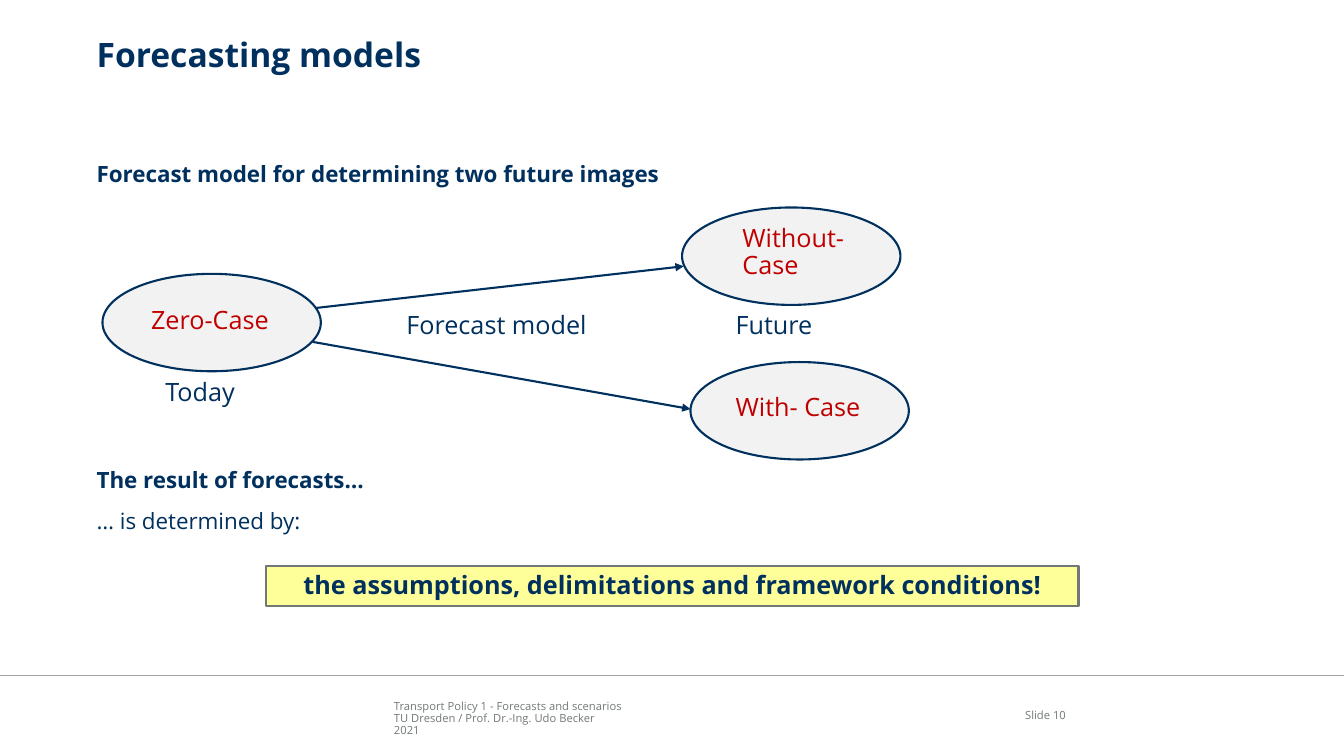
from pptx import Presentation
from pptx.dml.color import RGBColor
from pptx.enum.shapes import MSO_CONNECTOR, MSO_SHAPE
from pptx.enum.text import MSO_ANCHOR, PP_ALIGN
from pptx.oxml.ns import qn
from pptx.util import Inches, Pt
from lxml.etree import SubElement

COLORS = {"navy": "00305E", "red": "C00000", "gray": "727879",
          "rule": "A6A6A6", "pale": "F2F2F2", "gold": "FFFF99"}
COLS, ROWS = 160, 90
FLUSH = {"margin_left": 0, "margin_right": 0, "margin_top": 0, "margin_bottom": 0}


def color(name):
    return RGBColor.from_string(COLORS[name])


def apply(target, values):
    for key, value in values.items():
        setattr(target, key, value)


class Deck:
    def __init__(self):
        self.show = Presentation()
        apply(self.show, {"slide_width": Inches(13.33), "slide_height": Inches(7.5)})
        self.slide = self.show.slides.add_slide(self.show.slide_layouts[6])
        self.shapes = self.slide.shapes
        self.font = {"name": "Open Sans", "size": Pt(18), "bold": False}

    def place(self, x, y):
        return (round(self.show.slide_width * x / COLS),
                round(self.show.slide_height * y / ROWS))

    def label(self, shape, lines, tint="navy", frame=None, para=None, **font):
        box = shape.text_frame
        apply(box, {"word_wrap": True, **(frame or {})})
        for index, line in enumerate(lines):
            item = box.add_paragraph() if index else box.paragraphs[0]
            item.text = line
            apply(item, {"line_spacing": 0.9, **(para or {})})
            apply(item.font, {**self.font, **font})
            item.font.color.rgb = color(tint)
        return box

    def text(self, x, y, wide, high, *lines, **style):
        shape = self.shapes.add_textbox(*self.place(x, y), *self.place(wide, high))
        return self.label(shape, lines, **style)

    def shape(self, kind, x, y, wide, high, fill, edge):
        shape = self.shapes.add_shape(kind, *self.place(x, y), *self.place(wide, high))
        shape.shadow.inherit = False
        shape.fill.solid()
        shape.fill.fore_color.rgb = color(fill)
        shape.line.color.rgb = color(edge)
        shape.line.width = Pt(1.5)
        return shape

    def line(self, start, end, tint, width, arrow=False):
        line = self.shapes.add_connector(
            MSO_CONNECTOR.STRAIGHT, *self.place(*start), *self.place(*end))
        line.line.color.rgb = color(tint)
        line.line.width = Pt(width)
        props = line._element.spPr
        if arrow:
            SubElement(props.find(qn("a:ln")), qn("a:tailEnd"), type="triangle")
        SubElement(props, qn("a:effectLst"))


def main():
    deck = Deck()
    small = {"tint": "gray", "size": Pt(8)}
    deck.text(46.9, 82.9, 68, 4.8, "Transport Policy 1 - Forecasts and scenarios",
              "TU Dresden / Prof. Dr.-Ing. Udo Becker", "2021",
              frame={**FLUSH, "vertical_anchor": MSO_ANCHOR.BOTTOM}, **small)
    deck.line((0, 80.4), (COLS, 80.4), "rule", 1)
    deck.text(117.7, 82.8, 9.2, 4.8, "Slide 10",
              frame={**FLUSH, "vertical_anchor": MSO_ANCHOR.MIDDLE},
              para={"alignment": PP_ALIGN.RIGHT}, **small)

    deck.text(11.5, 4.6, 138.8, 9, "Forecasting models",
              frame=FLUSH, size=Pt(24), bold=True)
    deck.text(11.5, 19.4, 138.8, 4, "Forecast model for determining two future images",
              frame=FLUSH, size=Pt(16), bold=True)
    result = deck.text(11.5, 55.8, 138.8, 9, "The result of forecasts…",
                       "… is determined by:", frame=FLUSH, size=Pt(16))
    result.paragraphs[0].font.bold = True
    result.paragraphs[1].space_before = Pt(12)

    for start, end in (((37.3, 36.7), (81.4, 31.7)), ((37.2, 40.7), (82.2, 48.7))):
        deck.line(start, end, "navy", 1.5, arrow=True)
    for x, y in ((81.2, 24.7), (82.2, 43.1), (12.2, 32.6)):
        deck.shape(MSO_SHAPE.OVAL, x, y, 26, 11.6, "pale", "navy")

    labels = (("Without- Case", 87.2, 26.3, 19.2, 8.5, "red"),
              ("Zero-Case", 16.8, 36.1, 18, 4.8, "red"),
              ("With- Case", 86.4, 46.4, 19.2, 4.8, "red"),
              ("Future", 86.4, 36.7, 14.8, 4.8, "navy"),
              ("Today", 18.5, 44.6, 12, 4.8, "navy"),
              ("Forecast model", 47.2, 36.7, 30, 4.8, "navy"))
    for words, x, y, wide, high, tint in labels:
        deck.text(x, y, wide, high, words, tint=tint)

    banner = deck.shape(MSO_SHAPE.RECTANGLE, 31.7, 67.4, 96.7, 4.8, "gold", "gray")
    deck.label(banner, ["the assumptions, delimitations and framework conditions!"],
               para={"alignment": PP_ALIGN.CENTER}, bold=True)
    deck.show.save("out.pptx")


if __name__ == "__main__":
    main()
